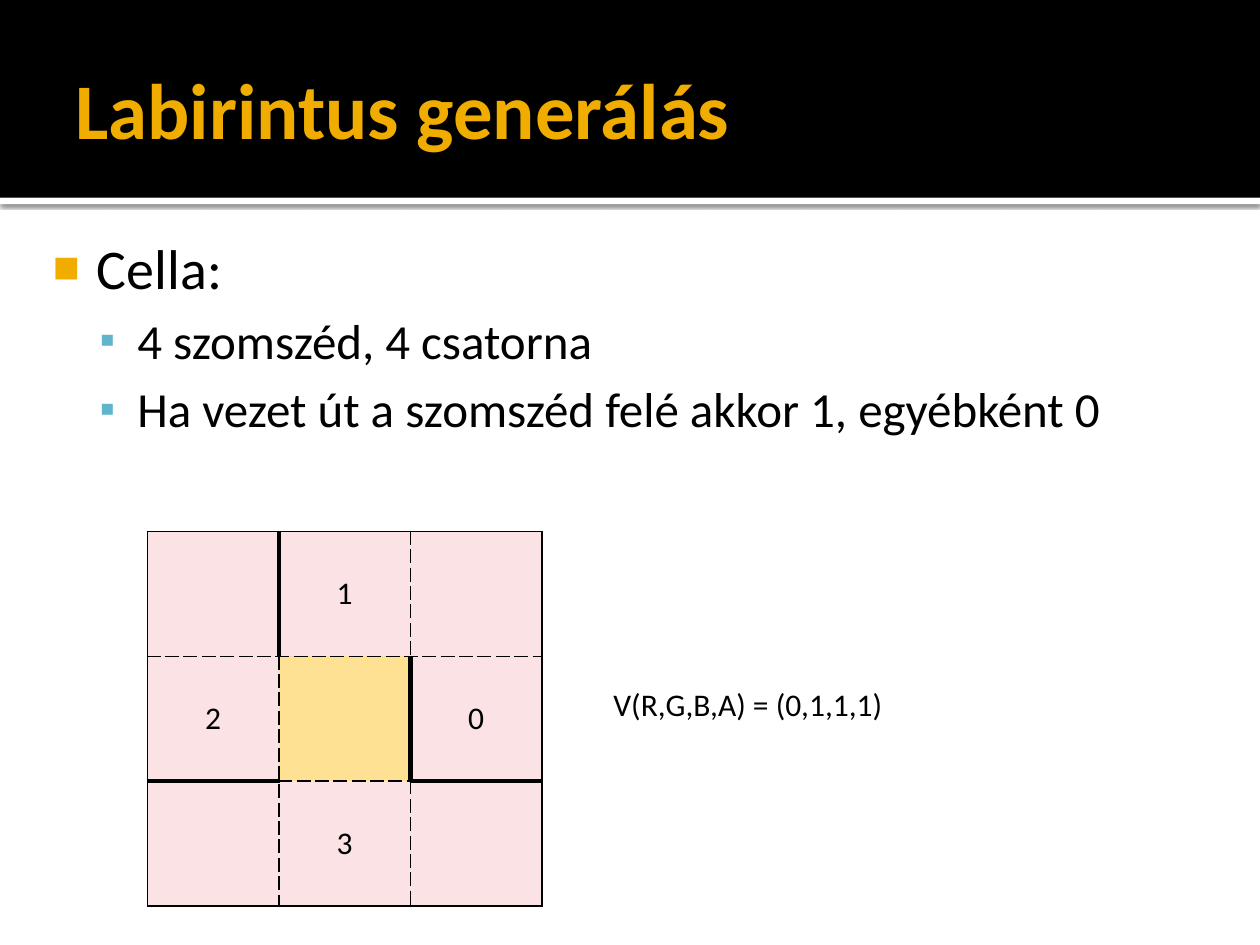
"""Builds the maze generation slide with its cell diagram."""
from lxml import etree
from pptx import Presentation
from pptx import util as u
from pptx.dml.color import RGBColor
from pptx.enum import shapes, text
from pptx.oxml import ns

BLACK = RGBColor(0x00, 0x00, 0x00)
WHITE = RGBColor(0xFF, 0xFF, 0xFF)
AMBER = RGBColor(0xF0, 0xAD, 0x00)
AQUA = RGBColor(0x60, 0xB5, 0xCC)
PINK = RGBColor(0xFA, 0xE2, 0xE5)
YELLOW = RGBColor(0xFF, 0xE1, 0x93)

TOPICS = [
    (0, "Cella:"),
    (1, "4 szomszéd, 4 csatorna"),
    (1, "Ha vezet út a szomszéd felé akkor 1, egyébként 0"),
]
BULLETS = [
    ("■", AMBER, 80, 32, 0.48, -0.35),
    ("▪", AQUA, 90, 28, 0.8, -0.3),
]
NEIGHBOURS = [["", "1", ""], ["2", "", "0"], ["", "3", ""]]
EDGES = {"outer": (1, "solid"), "open": (1, "dash"), "wall": (3, "solid")}
UPRIGHTS = [
    ["outer", "wall", "open", "outer"],
    ["outer", "open", "wall", "outer"],
    ["outer", "open", "open", "outer"],
]
LEVELS = [["outer"] * 3, ["open"] * 3, ["wall", "open", "wall"], ["outer"] * 3]


def add_node(parent, tag, **attributes):
    """Append a DrawingML element and return it."""
    node = etree.SubElement(parent, ns.qn(tag))
    for name, value in attributes.items():
        node.set(name, str(value))
    return node


def style(paragraph, size, color, bold=False):
    """Give a paragraph its font."""
    font = paragraph.font
    font.name, font.size, font.bold = "Calibri", u.Pt(size), bold
    font.color.rgb = color


def place(shape, left, top, width, height):
    """Move and size a placeholder."""
    shape.left, shape.top = u.Inches(left), u.Inches(top)
    shape.width, shape.height = u.Inches(width), u.Inches(height)


def set_margins(frame, left, top, right, bottom):
    """Set the inner margins of a text frame."""
    frame.margin_left, frame.margin_top = u.Inches(left), u.Inches(top)
    frame.margin_right, frame.margin_bottom = u.Inches(right), u.Inches(bottom)


def add_band(slide, top, height, color):
    """Put a full-width band behind everything else."""
    band = slide.shapes.add_shape(
        shapes.MSO_SHAPE.RECTANGLE, 0, u.Inches(top), u.Inches(10), u.Inches(height))
    band.shadow.inherit = False
    band.fill.solid()
    band.fill.fore_color.rgb = color
    band.line.fill.background()
    slide.shapes._spTree.insert(2, band._element)
    return band


def cast_shadow(band):
    """Drop a soft shadow below a band."""
    effects = band._element.spPr.find(ns.qn("a:effectLst"))
    shadow = add_node(effects, "a:outerShdw", blurRad=u.Pt(2.5), dist=u.Pt(0.8),
                      dir=90 * 60000, algn="tl", rotWithShape=0)
    shade = add_node(shadow, "a:srgbClr", val=BLACK)
    add_node(shade, "a:alpha", val=60000)


def fill_title(title):
    """Write the slide title."""
    place(title, 0.5, 0.17, 9, 1.37)
    frame = title.text_frame
    frame.text = "Labirintus generálás"
    frame.auto_size = text.MSO_AUTO_SIZE.NONE
    frame.vertical_anchor = text.MSO_ANCHOR.MIDDLE
    set_margins(frame, 0.1, 0.05, 0.05, 0.05)
    heading = frame.paragraphs[0]
    heading.alignment = text.PP_ALIGN.LEFT
    style(heading, 45, AMBER, bold=True)


def fill_topics(body):
    """Write the bulleted list."""
    place(body, 0.23, 1.75, 9.5, 2.39)
    frame = body.text_frame
    frame.text = "\n".join(topic for _, topic in TOPICS)
    frame.auto_size = text.MSO_AUTO_SIZE.NONE
    set_margins(frame, 0.06, 0.1, 0.1, 0.05)
    for paragraph, (level, _) in zip(frame.paragraphs, TOPICS):
        mark, color, scale, size, margin, indent = BULLETS[level]
        paragraph.level = level
        if level == 0:
            paragraph.space_before = u.Pt(0)
        properties = paragraph._p.get_or_add_pPr()
        properties.set("marL", str(u.Inches(margin)))
        properties.set("indent", str(u.Inches(indent)))
        add_node(add_node(properties, "a:buClr"), "a:srgbClr", val=color)
        add_node(properties, "a:buSzPct", val=scale * 1000)
        add_node(properties, "a:buChar", char=mark)
        style(paragraph, size, BLACK)


def set_border(cell, side, edge):
    """Draw one side of a maze cell."""
    width, dash = EDGES[edge]
    line = add_node(cell._tc.get_or_add_tcPr(), f"a:ln{side}", w=u.Pt(width))
    add_node(add_node(line, "a:solidFill"), "a:srgbClr", val=BLACK)
    add_node(line, "a:prstDash", val=dash)


def add_maze(slide):
    """Draw a cell and its numbered neighbours."""
    maze = slide.shapes.add_table(
        3, 3, u.Inches(1.17), u.Inches(4.22), u.Inches(3.13), u.Inches(2.97)).table
    maze.first_row = maze.horz_banding = False
    for row, labels in enumerate(NEIGHBOURS):
        for column, label in enumerate(labels):
            cell = maze.cell(row, column)
            cell.text = label
            cell.vertical_anchor = text.MSO_ANCHOR.MIDDLE
            paragraph = cell.text_frame.paragraphs[0]
            paragraph.alignment = text.PP_ALIGN.CENTER
            style(paragraph, 18, BLACK)
            set_border(cell, "L", UPRIGHTS[row][column])
            set_border(cell, "R", UPRIGHTS[row][column + 1])
            set_border(cell, "T", LEVELS[row][column])
            set_border(cell, "B", LEVELS[row + 1][column])
            cell.fill.solid()
            cell.fill.fore_color.rgb = YELLOW if row == column == 1 else PINK


def add_formula(slide):
    """Write the channel values beside the maze."""
    frame = slide.shapes.add_textbox(
        u.Inches(4.77), u.Inches(5.39), u.Inches(3.67), u.Inches(0.4)).text_frame
    frame.word_wrap = True
    frame.auto_size = text.MSO_AUTO_SIZE.SHAPE_TO_FIT_TEXT
    frame.text = "V(R,G,B,A) = (0,1,1,1)"
    style(frame.paragraphs[0], 18, BLACK)


def main():
    """Build and save the slide."""
    deck = Presentation()
    deck.slide_width, deck.slide_height = u.Inches(10), u.Inches(7.5)
    slide = deck.slides.add_slide(deck.slide_layouts[1])
    add_band(slide, 0, 1.57, BLACK)
    cast_shadow(add_band(slide, 1.57, 0.05, WHITE))
    fill_title(slide.shapes.title)
    fill_topics(slide.placeholders[1])
    add_maze(slide)
    add_formula(slide)
    deck.save("out.pptx")


if __name__ == "__main__":
    main()
